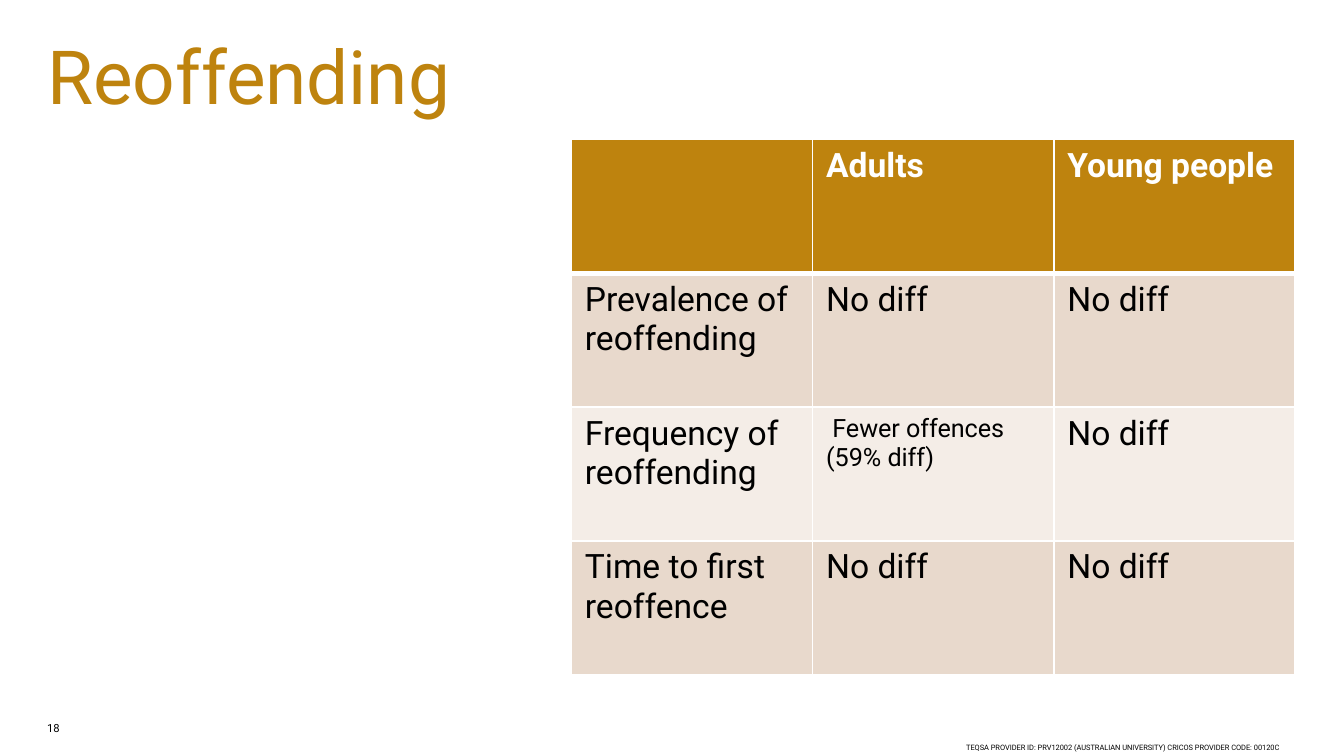
import pptx
import pptx.util
import pptx.dml.color
import pptx.enum.text
import pptx.oxml
import pptx.oxml.ns
from pptx.util import Cm

FONT = "Roboto"
COLOURS = {
    "gold": "BE830E",
    "sand": "E8D9CC",
    "cream": "F4EDE7",
    "white": "FFFFFF",
    "black": "000000",
}

# Content
TITLE = "Reoffending"
FINDINGS = [
    ("", "Adults", "Young people"),
    ("Prevalence of reoffending", "No diff", "No diff"),
    ("Frequency of reoffending", " Fewer offences (59% diff)", "No diff"),
    ("Time to first reoffence", "No diff", "No diff"),
]
SMALLER_CELLS = {(2, 1): 13.5}
PAGE_NUMBER = "18"
PROVIDER = ("TEQSA PROVIDER ID:\u00a0PRV12002\u00a0(AUSTRALIAN UNIVERSITY) "
            "CRICOS PROVIDER CODE: 00120C").replace("\u00a0", " ")

# Layout in centimetres
MARGIN = 0.89
TABLE_LEFT, TABLE_TOP = 10.8, 2.64
COLUMN_WIDTH, ROW_HEIGHT = 4.56, 2.53


def rgb(name):
    return pptx.dml.color.RGBColor.from_string(COLOURS[name])


def write(frame, text, size, colour, bold=False):
    frame.text = text
    paragraph = frame.paragraphs[0]
    paragraph.font.name = FONT
    paragraph.font.size = pptx.util.Pt(size)
    paragraph.font.bold = bold
    paragraph.font.color.rgb = rgb(colour)
    return paragraph


def clear_insets(frame):
    frame.margin_left = frame.margin_right = 0
    frame.margin_top = frame.margin_bottom = 0
    frame.vertical_anchor = pptx.enum.text.MSO_ANCHOR.TOP
    frame.word_wrap = True


def add_note(slide, text, size, left, top, width, height):
    note = slide.shapes.add_textbox(Cm(left), Cm(top), Cm(width), Cm(height))
    clear_insets(note.text_frame)
    write(note.text_frame, text, size, "black")


def set_borders(cell, widths):
    properties = cell._tc.get_or_add_tcPr()
    for position, (side, points) in enumerate(widths.items()):
        border = pptx.oxml.parse_xml(
            f'<a:ln{side} {pptx.oxml.ns.nsdecls("a")} w="{pptx.util.Pt(points)}">'
            f'<a:solidFill><a:srgbClr val="{COLOURS["white"]}"/></a:solidFill>'
            f'</a:ln{side}>')
        properties.insert(position, border)


deck = pptx.Presentation()
deck.slide_width, deck.slide_height = Cm(25.4), Cm(14.29)
slide = deck.slides.add_slide(deck.slide_layouts[5])

# Title
title = slide.shapes.title
title.left, title.top, title.width, title.height = (
    Cm(MARGIN), Cm(MARGIN), Cm(9.14), Cm(8.74))
clear_insets(title.text_frame)
title.text_frame.auto_size = pptx.enum.text.MSO_AUTO_SIZE.NONE
heading = write(title.text_frame, TITLE, 40, "gold")
heading.alignment = pptx.enum.text.PP_ALIGN.LEFT
heading.line_spacing = 0.8

# Findings table
row_count, column_count = len(FINDINGS), len(FINDINGS[0])
findings = slide.shapes.add_table(
    row_count, column_count, Cm(TABLE_LEFT), Cm(TABLE_TOP),
    Cm(COLUMN_WIDTH * column_count), Cm(ROW_HEIGHT * row_count)).table
for column in findings.columns:
    column.width = Cm(COLUMN_WIDTH)
for r, row in enumerate(FINDINGS):
    findings.rows[r].height = Cm(ROW_HEIGHT)
    header = r == 0
    fill = "gold" if header else ("sand" if r % 2 else "cream")
    for c, text in enumerate(row):
        cell = findings.cell(r, c)
        cell.fill.solid()
        cell.fill.fore_color.rgb = rgb(fill)
        write(cell.text_frame, text, SMALLER_CELLS.get((r, c), 18),
              "white" if header else "black", bold=header)
        set_borders(cell, {"L": 1, "R": 1, "T": 3 if r == 1 else 1,
                           "B": 3 if header else 1})

# Page number and provider line
add_note(slide, PAGE_NUMBER, 6, MARGIN, 13.64, 0.99, 0.3)
add_note(slide, PROVIDER, 4, 18.26, 14.05, 7, 0.24)

deck.save("out.pptx")
